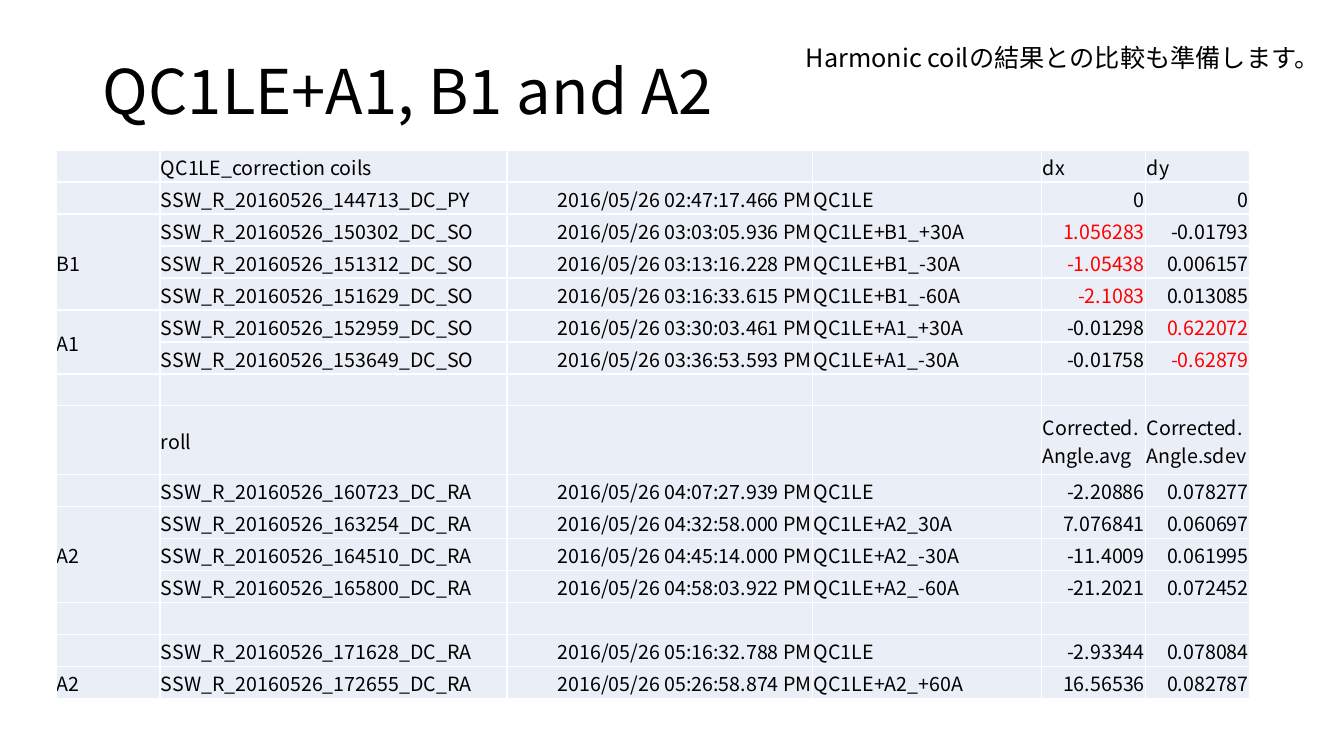
from lxml import etree
from pptx import Presentation
from pptx.dml.color import RGBColor
from pptx.enum.text import MSO_ANCHOR, PP_ALIGN
from pptx.oxml.ns import qn
from pptx.util import Emu, Pt

MID, TOP = MSO_ANCHOR.MIDDLE, MSO_ANCHOR.TOP
LEFT, RIGHT = PP_ALIGN.LEFT, PP_ALIGN.RIGHT
FONT = "Noto Sans CJK JP"
BLACK = RGBColor(0, 0, 0)
RED = RGBColor(0xFF, 0, 0)
PALE = RGBColor(0xEA, 0xEF, 0xF7)
WHITE = RGBColor(0xFF, 0xFF, 0xFF)
SCALE = 12192000 / 1344

COLS = [104, 347, 306, 229, 104, 104]
ROW_H, TALL_H = 32, 69
HEADS = (0, 8)
SPANS = [(2, 4), (5, 6), (10, 12)]
REDS = {(2, 4), (3, 4), (4, 4), (5, 5), (6, 5)}
EMPTY = [""] * 6


def scan(group, stamp, clock, state, first, second):
    """Return the six cell texts of one measurement."""
    name = f"SSW_R_20160526_{stamp}"
    return [group, name, f"2016/05/26 {clock} PM", state, first, second]


ROWS = [
    ["", "QC1LE_correction coils", "", "", "dx", "dy"],
    scan("", "144713_DC_PY", "02:47:17.466", "QC1LE", "0", "0"),
    scan("B1", "150302_DC_SO", "03:03:05.936", "QC1LE+B1_+30A", "1.056283", "-0.01793"),
    scan("", "151312_DC_SO", "03:13:16.228", "QC1LE+B1_-30A", "-1.05438", "0.006157"),
    scan("", "151629_DC_SO", "03:16:33.615", "QC1LE+B1_-60A", "-2.1083", "0.013085"),
    scan("A1", "152959_DC_SO", "03:30:03.461", "QC1LE+A1_+30A", "-0.01298", "0.622072"),
    scan("", "153649_DC_SO", "03:36:53.593", "QC1LE+A1_-30A", "-0.01758", "-0.62879"),
    EMPTY,
    ["", "roll", "", "", "Corrected.Angle.avg", "Corrected.Angle.sdev"],
    scan("", "160723_DC_RA", "04:07:27.939", "QC1LE", "-2.20886", "0.078277"),
    scan("A2", "163254_DC_RA", "04:32:58.000", "QC1LE+A2_30A", "7.076841", "0.060697"),
    scan("", "164510_DC_RA", "04:45:14.000", "QC1LE+A2_-30A", "-11.4009", "0.061995"),
    scan("", "165800_DC_RA", "04:58:03.922", "QC1LE+A2_-60A", "-21.2021", "0.072452"),
    EMPTY,
    scan("", "171628_DC_RA", "05:16:32.788", "QC1LE", "-2.93344", "0.078084"),
    scan("A2", "172655_DC_RA", "05:26:58.874", "QC1LE+A2_+60A", "16.56536", "0.082787"),
]


def px(num):
    """Turn whole px into EMU."""
    return Emu(round(num * SCALE))


def add_run(para, text, size, color=BLACK):
    """Add one styled run to a paragraph."""
    run = para.add_run()
    run.text = text
    run.font.size = Pt(size)
    run.font.name = FONT
    run.font.color.rgb = color
    etree.SubElement(run.font._element, qn("a:ea"), typeface=FONT)


def add_text(slide, box, text, size, anchor=TOP, wrap=True, space=1.0):
    """Add a text box with one paragraph."""
    frame = slide.shapes.add_textbox(*map(px, box)).text_frame
    frame.word_wrap = wrap
    frame.vertical_anchor = anchor
    para = frame.paragraphs[0]
    para.line_spacing = space
    add_run(para, text, size)


def add_edges(cell):
    """Draw thin white borders around a cell."""
    props = cell._tc.get_or_add_tcPr()
    for side in ("lnL", "lnR", "lnT", "lnB"):
        line = etree.SubElement(props, qn(f"a:{side}"), w=str(Pt(1)))
        fill = etree.SubElement(line, qn("a:solidFill"))
        etree.SubElement(fill, qn("a:srgbClr"), val=str(WHITE))


def fill_cell(cell, text, align, color):
    """Style a cell and write its text."""
    add_edges(cell)
    cell.fill.solid()
    cell.fill.fore_color.rgb = PALE
    cell.vertical_anchor = MID
    cell.margin_left = cell.margin_right = cell.margin_top = px(1)
    cell.margin_bottom = 0
    para = cell.text_frame.paragraphs[0]
    para.alignment = align
    if text:
        add_run(para, text, 14, color)
    else:
        etree.SubElement(para._p, qn("a:endParaRPr"), sz="1400")


def add_grid(slide, left, top):
    """Add the table of measurements."""
    tall = [TALL_H if row == HEADS[1] else ROW_H for row in range(len(ROWS))]
    size = map(px, (left, top, sum(COLS), sum(tall)))
    table = slide.shapes.add_table(len(ROWS), len(COLS), *size).table
    table.first_row = table.horz_banding = False
    for col, width in zip(table.columns, COLS):
        col.width = px(width)
    for row, height in zip(table.rows, tall):
        row.height = px(height)
    for row, texts in enumerate(ROWS):
        for col, text in enumerate(texts):
            right = col in (2, 4, 5) and row not in HEADS
            color = RED if (row, col) in REDS else BLACK
            fill_cell(table.cell(row, col), text, RIGHT if right else LEFT, color)
    for first, last in SPANS:
        table.cell(first, 0).merge(table.cell(last, 0))


def main():
    """Build and save the slide."""
    deck = Presentation()
    deck.slide_width, deck.slide_height = px(1344), px(756)
    slide = deck.slides.add_slide(deck.slide_layouts[6])
    add_text(slide, (93, 40, 1159, 110), "QC1LE+A1, B1 and A2", 44, MID, space=0.9)
    add_grid(slide, 56, 150)
    note = "Harmonic coilの結果との比較も準備します。"
    add_text(slide, (796, 37, 526, 40), note, 18, wrap=False)
    deck.save("out.pptx")


if __name__ == "__main__":
    main()
